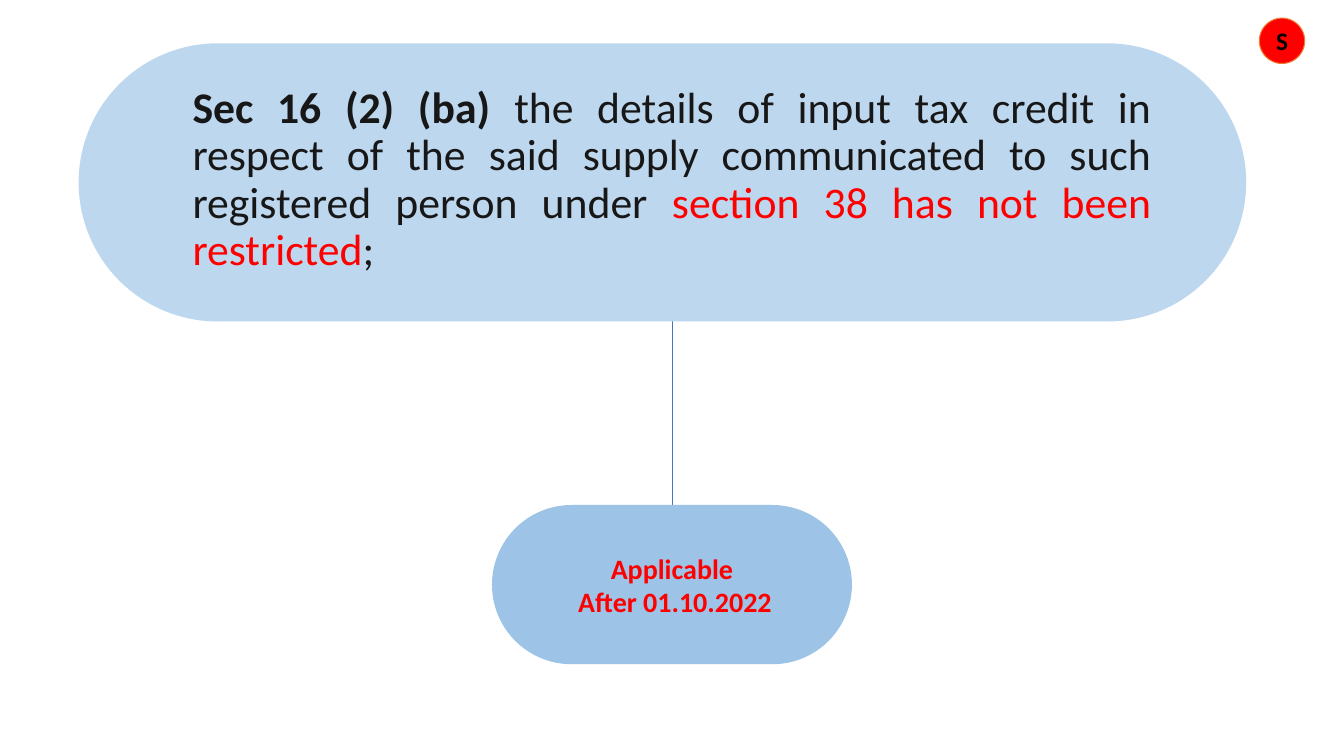
from dataclasses import dataclass

from lxml import etree
from pptx import Presentation
from pptx.dml.color import RGBColor
from pptx.enum.shapes import MSO_CONNECTOR, MSO_SHAPE
from pptx.enum.text import MSO_ANCHOR, PP_ALIGN
from pptx.oxml.ns import qn
from pptx.util import Inches, Pt

PILL, CIRCLE = MSO_SHAPE.ROUNDED_RECTANGLE, MSO_SHAPE.OVAL
STRAIGHT = MSO_CONNECTOR.STRAIGHT
MIDDLE = MSO_ANCHOR.MIDDLE
CENTER, JUSTIFY = PP_ALIGN.CENTER, PP_ALIGN.JUSTIFY
BLANK_LAYOUT = 6


@dataclass(frozen=True)
class Theme:
    font: str = "Calibri"
    ink: str = "181717"
    black: str = "000000"
    red: str = "FF0000"
    pale_blue: str = "BDD7EE"
    mid_blue: str = "9DC3E6"
    line_blue: str = "4472C4"
    orange: str = "ED7D31"
    clause_size: float = 31.2
    date_size: float = 20
    badge_size: float = 18


class SlideBuilder:
    def __init__(self, slide, theme):
        self.shapes = slide.shapes
        self.theme = theme

    def connector(self, x, top, bottom):
        line = self.shapes.add_connector(
            STRAIGHT, Inches(x), Inches(top), Inches(x), Inches(bottom))
        line.line.color.rgb = RGBColor.from_string(self.theme.line_blue)
        line.line.width = Pt(0.5)
        etree.SubElement(line._element.spPr, qn("a:effectLst"))

    def shape(self, kind, bounds, fill, outline=None):
        shape = self.shapes.add_shape(kind, *map(Inches, bounds))
        shape.shadow.inherit = False
        shape.fill.solid()
        shape.fill.fore_color.rgb = RGBColor.from_string(fill)
        if outline:
            shape.line.color.rgb = RGBColor.from_string(outline)
            shape.line.width = Pt(0.75)
        else:
            shape.line.fill.background()
        if kind == PILL:
            shape.adjustments[0] = 0.5
        return shape

    def text_box(self, bounds):
        return self.shapes.add_textbox(*map(Inches, bounds))

    def fill_text(self, box, paragraphs, size, align=CENTER, insets=(0.1, 0.1), spacing=1.0):
        """Fill a box with paragraphs, each a list of (text, colour, bold) spans."""
        frame = box.text_frame
        frame.word_wrap = True
        frame.vertical_anchor = MIDDLE
        frame.margin_left = frame.margin_right = Inches(insets[0])
        frame.margin_top = frame.margin_bottom = Inches(insets[1])
        for index, spans in enumerate(paragraphs):
            para = frame.add_paragraph() if index else frame.paragraphs[0]
            para.alignment = align
            para.line_spacing = spacing
            for text, color, bold in spans:
                span = para.add_run()
                span.text = text
                span.font.name = self.theme.font
                span.font.size = Pt(size)
                span.font.bold = bold
                span.font.color.rgb = RGBColor.from_string(color)


def main():
    deck = Presentation()
    deck.slide_width, deck.slide_height = Inches(13.33), Inches(7.5)
    theme = Theme()
    page = SlideBuilder(deck.slides.add_slide(deck.slide_layouts[BLANK_LAYOUT]), theme)

    page.connector(6.67, 2.79, 5.49)

    page.shape(PILL, (0.78, 0.43, 11.58, 2.76), theme.pale_blue)
    clause = page.text_box((1.78, 0.41, 9.77, 2.76))
    page.fill_text(clause, [[
        ("Sec 16 (2) (ba) ", theme.ink, True),
        ("the details of input tax credit in respect of the said supply "
         "communicated to such registered person under ", theme.ink, False),
        ("section 38 has not been restricted", theme.red, False),
        (";", theme.ink, False),
    ]], theme.clause_size, JUSTIFY, (0.13, 0.07), 0.9)

    start_date = page.shape(PILL, (4.88, 5.01, 3.57, 1.58), theme.mid_blue)
    page.fill_text(start_date, [
        [("Applicable", theme.red, True)],
        [(" After 01.10.2022", theme.red, True)],
    ], theme.date_size)

    badge = page.shape(CIRCLE, (12.49, 0.18, 0.45, 0.45), theme.red, theme.orange)
    page.fill_text(badge, [[("S", theme.black, True)]], theme.badge_size)

    deck.save("out.pptx")


if __name__ == "__main__":
    main()
